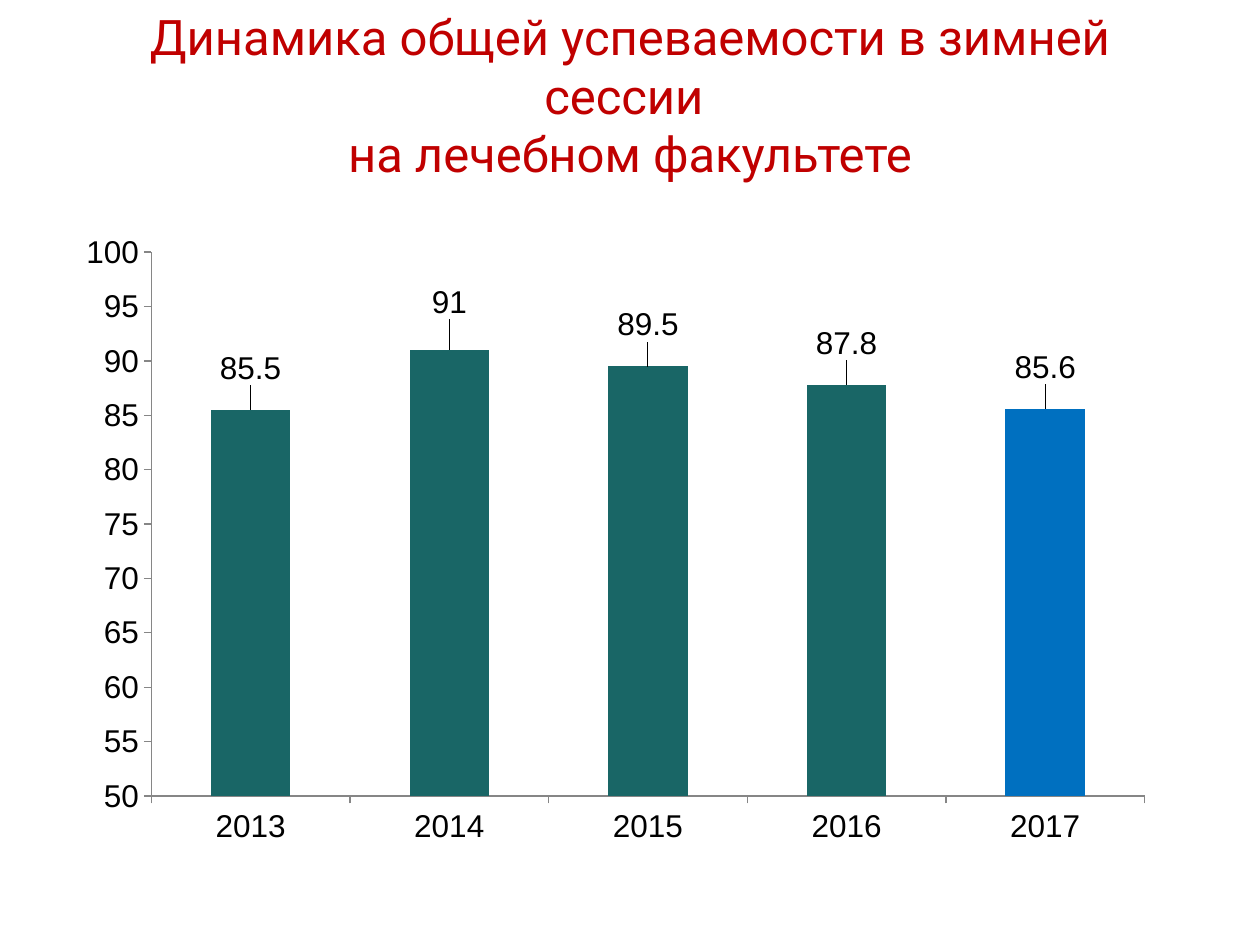
import pptx
import pptx.chart.data
import pptx.dml.color
import pptx.enum.chart
import pptx.enum.text
import pptx.oxml
import pptx.oxml.ns
import pptx.util

Pt = pptx.util.Pt
ENUM = pptx.enum.chart

TITLE = "Динамика общей успеваемости в зимней сессии \vна лечебном факультете"
YEARS = ["2013", "2014", "2015", "2016", "2017"]
RATES = [85.5, 91, 89.5, 87.8, 85.6]
LAST = len(YEARS) - 1
# Shift of each value label, as shares of the chart's width and height
SHIFTS = [(0, -0.03), (0, -0.04), (0, -0.03), (0, -0.03), (0, -0.03)]
PLOT = {"x": 0.08, "y": 0.05, "w": 0.9, "h": 0.86}
COLORS = {"title": "C00000", "bar": "196666", "last": "0070C0",
          "text": "000000", "axis": "868686"}


def color(name):
    return pptx.dml.color.RGBColor.from_string(COLORS[name])


def layout(sizes, head=""):
    """Return a manual chart layout element."""
    body = "".join(f'<c:{key} val="{val}"/>' for key, val in sizes.items())
    return pptx.oxml.parse_xml(
        f'<c:layout {pptx.oxml.ns.nsdecls("c")}><c:manualLayout>'
        f"{head}{body}</c:manualLayout></c:layout>")


def add_title(slide):
    title = slide.shapes.title
    title.left, title.top, title.width, title.height = Pt(36), Pt(12), Pt(648), Pt(84)
    frame = title.text_frame
    frame.text = TITLE
    frame.vertical_anchor = pptx.enum.text.MSO_ANCHOR.MIDDLE
    line = frame.paragraphs[0]
    line.alignment = pptx.enum.text.PP_ALIGN.CENTER
    line.font.size = Pt(28)
    line.font.name = "Roboto"
    line.font.color.rgb = color("title")


def style_axes(chart):
    for axis in (chart.category_axis, chart.value_axis):
        axis.has_major_gridlines = False
        axis.major_tick_mark = ENUM.XL_TICK_MARK.OUTSIDE
        axis.minor_tick_mark = ENUM.XL_TICK_MARK.NONE
        axis.format.line.color.rgb = color("axis")
        axis.format.line.width = Pt(0.75)
    scale = chart.value_axis
    scale.minimum_scale, scale.maximum_scale, scale.major_unit = 50, 100, 5


def style_bars(plot):
    plot.gap_width = 150
    plot.vary_by_categories = False
    bars = plot.series[0]
    bars.invert_if_negative = False
    bars.format.fill.solid()
    bars.format.fill.fore_color.rgb = color("bar")
    last = bars.points[LAST].format.fill
    last.solid()
    last.fore_color.rgb = color("last")
    bars.data_labels.show_value = True
    for num in range(len(YEARS)):
        bars.points[num].data_label.position = ENUM.XL_LABEL_POSITION.OUTSIDE_END


def place_parts(chart):
    root = chart.element
    area = root.xpath("c:chart/c:plotArea")[0]
    for old in area.xpath("c:layout"):
        area.remove(old)
    head = ('<c:layoutTarget val="inner"/>'
            '<c:xMode val="edge"/><c:yMode val="edge"/>')
    area.insert(0, layout(PLOT, head))
    for label, (x, y) in zip(root.xpath(".//c:dLbl"), SHIFTS):
        label.insert(1, layout({"x": x, "y": y}))


def add_chart(slide):
    data = pptx.chart.data.CategoryChartData()
    data.categories = YEARS
    data.add_series("Series 1", RATES)
    chart = slide.shapes.add_chart(
        ENUM.XL_CHART_TYPE.COLUMN_CLUSTERED,
        Pt(36), Pt(126), Pt(630.72), Pt(361.44), data).chart
    chart.has_title = False
    chart.has_legend = False
    chart.font.size = Pt(18)
    chart.font.name = "Arial"
    chart.font.color.rgb = color("text")
    style_axes(chart)
    style_bars(chart.plots[0])
    place_parts(chart)


def main():
    deck = pptx.Presentation()
    deck.slide_width, deck.slide_height = Pt(720), Pt(540)
    slide = deck.slides.add_slide(deck.slide_layouts[5])
    add_title(slide)
    add_chart(slide)
    deck.save("out.pptx")


if __name__ == "__main__":
    main()
